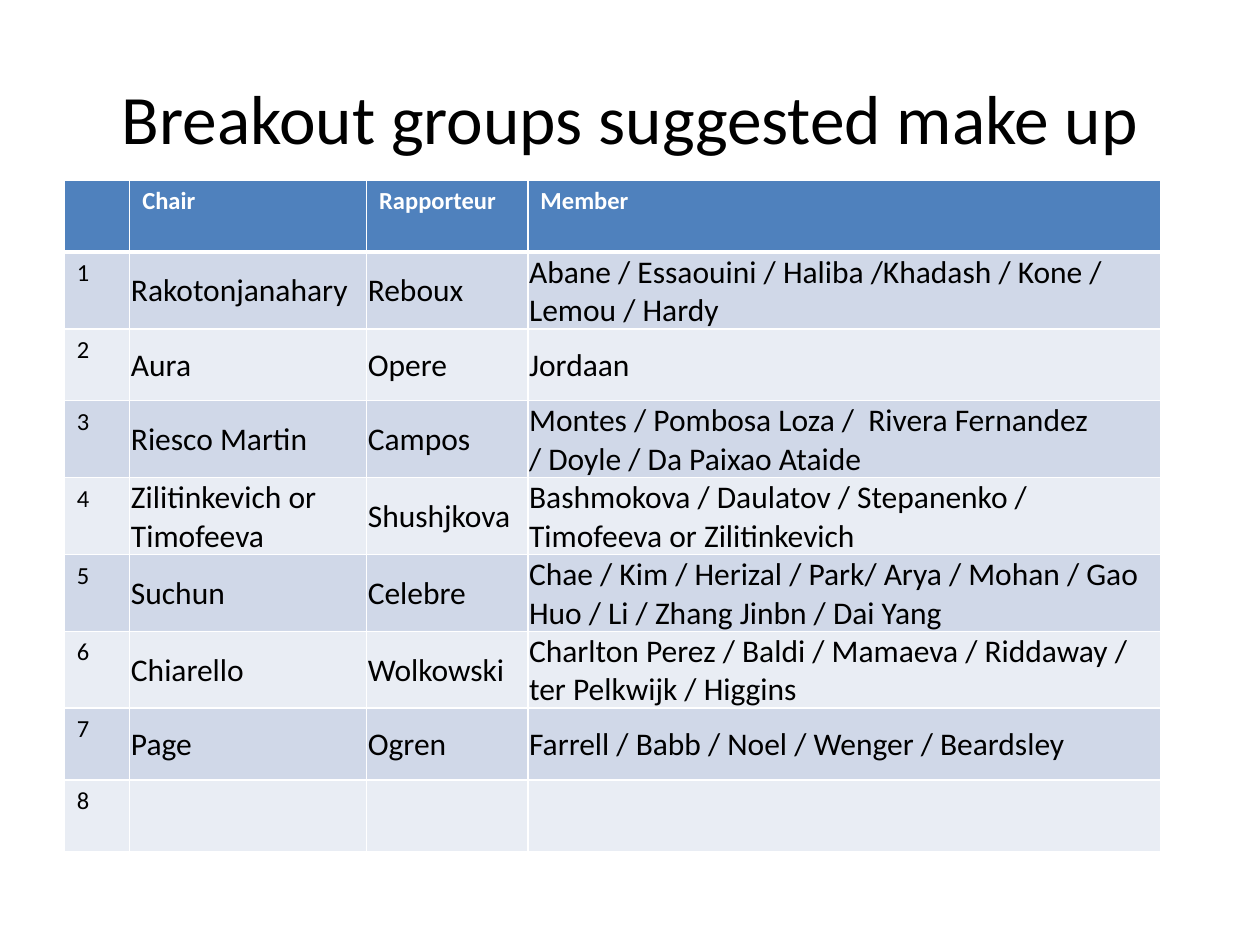
import pptx
import pptx.dml.color
import pptx.enum.text
import pptx.oxml.ns
import pptx.util
from lxml import etree

Inches = pptx.util.Inches
Pt = pptx.util.Pt
ANCHOR = pptx.enum.text.MSO_ANCHOR

FONT = "Calibri"
COLORS = {
    "text": "000000",
    "header": "4F81BD",
    "header_text": "FFFFFF",
    "odd_row": "D0D8E8",
    "even_row": "E9EDF4",
    "rule": "FFFFFF",
}
COLUMN_WIDTHS = [0.52, 1.88, 1.28, 5.02]
ROW_HEIGHT = 0.57
HEADINGS = ["", "Chair", "Rapporteur", "Member"]
# Chair, rapporteur, members; the group number is the row number
GROUPS = [
    ["Rakotonjanahary", "Reboux",
     "Abane / Essaouini / Haliba /Khadash / Kone / Lemou / Hardy"],
    ["Aura", "Opere", "Jordaan"],
    ["Riesco Martin", "Campos",
     "Montes / Pombosa Loza /  Rivera Fernandez\n/ Doyle / Da Paixao Ataide"],
    ["Zilitinkevich or Timofeeva", "Shushjkova",
     "Bashmokova / Daulatov / Stepanenko / Timofeeva or Zilitinkevich"],
    ["Suchun", "Celebre",
     "Chae / Kim / Herizal / Park/ Arya / Mohan / Gao\n"
     "Huo / Li / Zhang Jinbn / Dai Yang"],
    ["Chiarello", "Wolkowski",
     "Charlton Perez / Baldi / Mamaeva / Riddaway / ter Pelkwijk / Higgins"],
    ["Page", "Ogren", "Farrell / Babb / Noel / Wenger / Beardsley"],
    ["", "", ""],
]


def rgb(name):
    return pptx.dml.color.RGBColor.from_string(COLORS[name])


def write(frame, text, size, color="text", bold=False, align=None):
    frame.text = text
    for paragraph in frame.paragraphs:
        paragraph.alignment = align
        paragraph.font.name = FONT
        paragraph.font.size = Pt(size)
        paragraph.font.bold = bold
        paragraph.font.color.rgb = rgb(color)


def set_borders(cell, top=1, bottom=1):
    properties = cell._tc.get_or_add_tcPr()
    qn = pptx.oxml.ns.qn
    for side, width in (("L", 1), ("R", 1), ("T", top), ("B", bottom)):
        line = etree.SubElement(properties, qn(f"a:ln{side}"), w=str(Pt(width)))
        fill = etree.SubElement(line, qn("a:solidFill"))
        etree.SubElement(fill, qn("a:srgbClr"), val=COLORS["rule"])


def add_title(slide, left, top, width, height):
    title = slide.shapes.add_textbox(
        Inches(left), Inches(top), Inches(width), Inches(height))
    frame = title.text_frame
    frame.word_wrap = True
    frame.vertical_anchor = ANCHOR.MIDDLE
    write(frame, "Breakout groups suggested make up", 39.6,
          align=pptx.enum.text.PP_ALIGN.CENTER)


def add_groups_table(slide, left, top):
    rows = [HEADINGS]
    rows += [[str(number), *group] for number, group in enumerate(GROUPS, 1)]
    table = slide.shapes.add_table(
        len(rows), len(HEADINGS), Inches(left), Inches(top),
        Inches(sum(COLUMN_WIDTHS)), Inches(ROW_HEIGHT * len(rows))).table
    for column, width in zip(table.columns, COLUMN_WIDTHS):
        column.width = Inches(width)

    for r, row in enumerate(rows):
        table.rows[r].height = Inches(ROW_HEIGHT)
        header = r == 0
        band = "header" if header else "odd_row" if r % 2 else "even_row"
        for c, text in enumerate(row):
            cell = table.cell(r, c)
            # The heavy rule under the header is shared with the first group
            set_borders(cell, top=3 if r == 1 else 1, bottom=3 if header else 1)
            cell.fill.solid()
            cell.fill.fore_color.rgb = rgb(band)
            name_cell = not header and c > 0
            if name_cell and text:
                cell.vertical_anchor = ANCHOR.MIDDLE
                cell.margin_left = cell.margin_right = Inches(0.01)
                cell.margin_top = Inches(0.01)
                cell.margin_bottom = 0
            write(cell.text_frame, text, 18 if name_cell else 14,
                  "header_text" if header else "text", bold=header)


def main():
    deck = pptx.Presentation()
    deck.slide_width = Inches(10)
    deck.slide_height = Inches(7.5)
    slide = deck.slides.add_slide(deck.slide_layouts[6])
    add_title(slide, 0.5, 0.3, 9, 1.25)
    add_groups_table(slide, 0.51, 1.43)
    deck.save("out.pptx")


if __name__ == "__main__":
    main()
